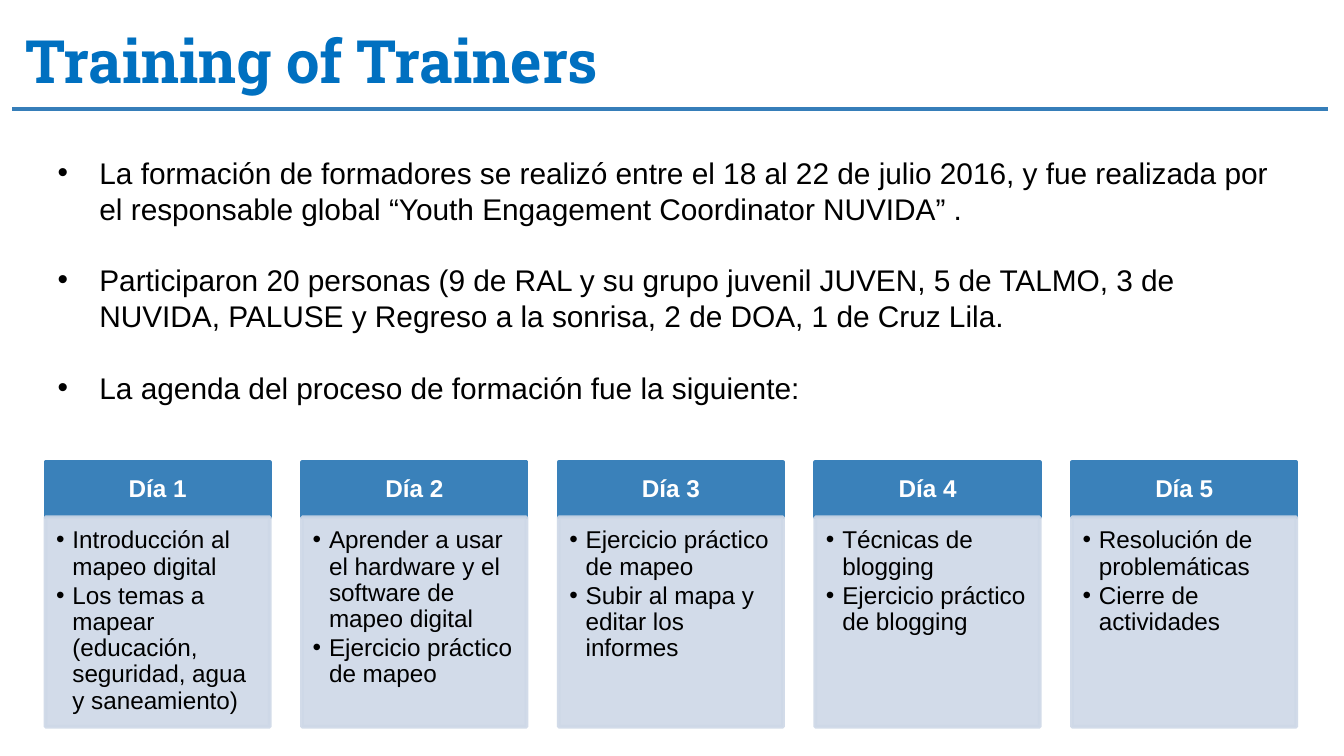
from pptx import Presentation
from pptx.dml.color import RGBColor as RGB
from pptx.enum.shapes import MSO_CONNECTOR as CONN, MSO_SHAPE as SHAPE
from pptx.enum.text import MSO_ANCHOR as ANCHOR, PP_ALIGN as ALIGN
from pptx.oxml.ns import qn
from pptx.util import Cm, Pt
from lxml import etree

COLORS = {"title": "0070C0", "rule": "367EB9", "head": "3A81BA",
          "body": "CED8E7", "text": "000000", "white": "FFFFFF"}


def write(tf, lines, font, color, para, insets, indent=None):
    """Fill a text frame with one paragraph per line, bulleted if indented."""
    tf.word_wrap = True
    for side, value in zip(("left", "top", "right", "bottom"), insets):
        setattr(tf, f"margin_{side}", Cm(value))
    for i, line in enumerate(lines):
        p = tf.paragraphs[0] if i == 0 else tf.add_paragraph()
        for name, value in para.items():
            setattr(p, name, value)
        if indent:
            pPr = p._p.get_or_add_pPr()
            pPr.set("marL", str(Cm(indent)))
            pPr.set("indent", str(-Cm(indent)))
            etree.SubElement(pPr, qn("a:buFont")).set("typeface", "Arial")
            etree.SubElement(pPr, qn("a:buChar")).set("char", "•")
        r = p.add_run()
        r.text = line
        for name, value in font.items():
            setattr(r.font, name, value)
        r.font.color.rgb = RGB.from_string(COLORS[color])


def add_box(shapes, x, y, w, h, color, alpha=None):
    """Add a rectangle whose fill and outline share one colour."""
    sp = shapes.add_shape(SHAPE.RECTANGLE, Cm(x), Cm(y), Cm(w), Cm(h))
    sp.shadow.inherit = False
    sp.line.width = Pt(2)
    for fill in (sp.fill, sp.line.fill):
        fill.solid()
        fill.fore_color.rgb = RGB.from_string(COLORS[color])
    if alpha:
        for clr in sp._element.spPr.iter(qn("a:srgbClr")):
            etree.SubElement(clr, qn("a:alpha")).set("val", str(alpha * 1000))
    return sp


prs = Presentation()
prs.slide_width, prs.slide_height = Cm(25.4), Cm(14.29)
s = prs.slides.add_slide(prs.slide_layouts[6])

# Title
sp = s.shapes.add_textbox(Cm(0.23), Cm(0.25), Cm(21.59), Cm(1.8))
sp.text_frame.vertical_anchor = ANCHOR.BOTTOM
write(sp.text_frame, ["Training of Trainers"],
      {"name": "Roboto Slab", "size": Pt(32), "bold": True}, "title", {}, [0.25] * 4)

# Rule under the title
rule = s.shapes.add_connector(CONN.STRAIGHT, Cm(0.23), Cm(2.06), Cm(25.1), Cm(2.06))
rule.line.color.rgb = RGB.from_string(COLORS["rule"])
rule.line.width = Pt(2.25)
etree.SubElement(rule._element.spPr, qn("a:effectLst"))

# Introduction
INTRO = [
    "La formación de formadores se realizó entre el 18 al 22 de julio 2016, y fue "
    "realizada por el responsable global “Youth Engagement Coordinator NUVIDA” .",
    "Participaron 20 personas (9 de RAL y su grupo juvenil JUVEN, 5 de TALMO, 3 de "
    "NUVIDA, PALUSE y Regreso a la sonrisa, 2 de DOA, 1 de Cruz Lila.",
    "La agenda del proceso de formación fue la siguiente:",
]
sp = s.shapes.add_textbox(Cm(0.84), Cm(2.79), Cm(23.65), Cm(5.74))
write(sp.text_frame, INTRO, {"name": "Arial", "size": Pt(16)}, "text",
      {"space_after": Pt(19.2)}, (0.25, 0.13, 0.25, 0.13), indent=0.79)

# Agenda, one column per day
AGENDA = [
    ["Introducción al mapeo digital",
     "Los temas a mapear (educación, seguridad, agua y saneamiento)"],
    ["Aprender a usar el hardware y el software de mapeo digital",
     "Ejercicio práctico de mapeo"],
    ["Ejercicio práctico de mapeo", "Subir al mapa y editar los informes"],
    ["Técnicas de blogging", "Ejercicio práctico de blogging"],
    ["Resolución de problemáticas", "Cierre de actividades"],
]
LEFT, PITCH, WIDTH = 0.86, 4.85, 4.24
TOP, HEAD_H, BODY_H = 8.74, 1.04, 3.96
for i, items in enumerate(AGENDA):
    x = LEFT + i * PITCH
    head = add_box(s.shapes, x, TOP, WIDTH, HEAD_H, "head")
    head.text_frame.vertical_anchor = ANCHOR.MIDDLE
    write(head.text_frame, [f"Día {i + 1}"],
          {"name": "Arial", "size": Pt(13), "bold": True}, "white",
          {"alignment": ALIGN.CENTER, "line_spacing": 0.9}, (0.25, 0.15, 0.25, 0.15))

    body = add_box(s.shapes, x, TOP + HEAD_H, WIDTH, BODY_H, "body", alpha=90)
    body.text_frame.vertical_anchor = ANCHOR.TOP
    write(body.text_frame, items, {"name": "Arial", "size": Pt(13)}, "text",
          {"alignment": ALIGN.LEFT, "line_spacing": 0.9, "space_after": Pt(1.5)},
          (0.2, 0.2, 0.25, 0.28), indent=0.31)

prs.save("out.pptx")
